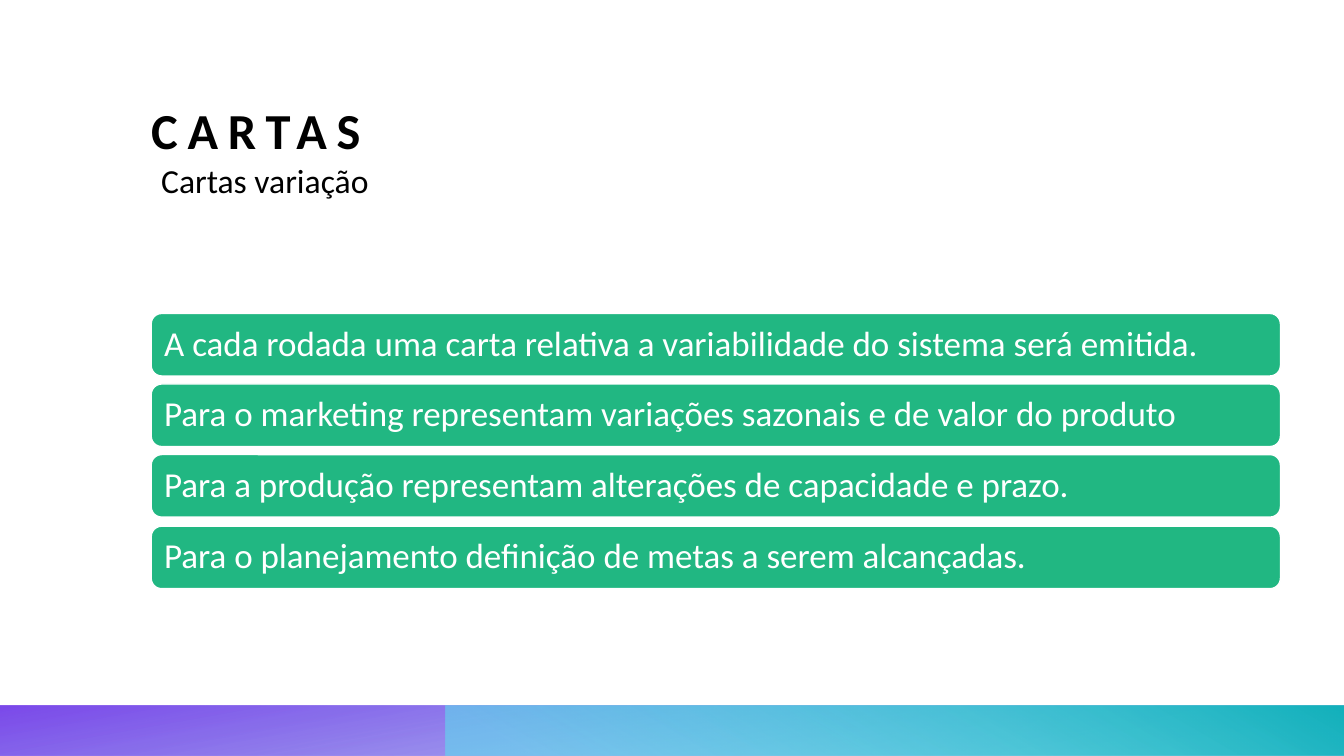
from lxml import etree
from pptx import Presentation
from pptx.dml.color import RGBColor
from pptx.enum.shapes import MSO_SHAPE
from pptx.enum.text import MSO_ANCHOR, MSO_AUTO_SIZE, PP_ALIGN
from pptx.oxml.ns import qn
from pptx.util import Pt

RECT, ROUND_RECT = MSO_SHAPE.RECTANGLE, MSO_SHAPE.ROUNDED_RECTANGLE
TOP, MIDDLE, BOTTOM = MSO_ANCHOR.TOP, MSO_ANCHOR.MIDDLE, MSO_ANCHOR.BOTTOM
LEFT, GROW = PP_ALIGN.LEFT, MSO_AUTO_SIZE.SHAPE_TO_FIT_TEXT

PX = 9144
FONT = "Calibri"
COLORS = {
    "text": "000000", "white": "FFFFFF", "card": "21B782",
    "indigo": "2E40D9", "purple": "6529E7", "cyan": "5BE4EE", "teal": "14B1BC",
}
SLIDE_W, SLIDE_H = 1333, 750
MARGIN, CONTENT_W = 150, 1120
FIRST_TOP, LAST_TOP, CARD_H = 311, 522, 62
BAND_TOP, BAND_H, TEAL_LEFT = 700, 50, 442
CARDS = [
    "A cada rodada uma carta relativa a variabilidade do sistema será emitida.",
    "Para o marketing representam variações sazonais e de valor do produto",
    "Para a produção representam alterações de capacidade e prazo.",
    "Para o planejamento definição de metas a serem alcançadas.",
]


def color(name):
    """Return the RGB value of a named colour."""
    return RGBColor.from_string(COLORS[name])


def box(*lengths):
    """Convert pixel lengths to EMU."""
    return [n * PX for n in lengths]


def write(sp, text, size, ink, anchor, insets):
    """Fill a shape with one left-aligned paragraph and return it."""
    tf = sp.text_frame
    tf.word_wrap = True
    tf.vertical_anchor = anchor
    tf.margin_left, tf.margin_top, tf.margin_right, tf.margin_bottom = box(*insets)
    p = tf.paragraphs[0]
    p.text = text
    p.alignment = LEFT
    p.font.name, p.font.size = FONT, Pt(size)
    p.font.color.rgb = color(ink)
    return p


def add_band(s, left, stops, angle, rotation=0):
    """Add a mirrored gradient band reaching the right slide edge."""
    sp = s.shapes.add_shape(RECT, *box(left, BAND_TOP, SLIDE_W - left, BAND_H))
    sp.shadow.inherit = False
    sp.line.fill.background()
    sp.rotation = rotation
    xfrm = sp._element.spPr.find(qn("a:xfrm"))
    xfrm.set("flipH", "1")
    grad = etree.Element(qn("a:gradFill"), rotWithShape="1")
    gs_lst = etree.SubElement(grad, qn("a:gsLst"))
    for pos, name, alpha in stops:
        gs = etree.SubElement(gs_lst, qn("a:gs"), pos=str(pos * 1000))
        clr = etree.SubElement(gs, qn("a:srgbClr"), val=COLORS[name])
        etree.SubElement(clr, qn("a:alpha"), val=str(alpha * 1000))
    etree.SubElement(grad, qn("a:lin"), ang=str(angle * 60000), scaled="0")
    sp._element.spPr.find(qn("a:prstGeom")).addnext(grad)


def add_title(s, text):
    """Add the bold, letter-spaced title."""
    sp = s.shapes.add_textbox(*box(MARGIN, 87, CONTENT_W, 71))
    p = write(sp, text, 36, "text", BOTTOM, (0, 0, 0, 0))
    p.font.bold = True
    p.runs[0].font._element.set("spc", "700")


def add_subtitle(s, text):
    """Add the line under the title."""
    sp = s.shapes.add_textbox(*box(MARGIN, 154, CONTENT_W, 50))
    write(sp, text, 24, "text", TOP, (10, 5, 10, 5))
    sp.text_frame.auto_size = GROW


def add_card(s, top, text):
    """Add one rounded green bar with its text."""
    sp = s.shapes.add_shape(ROUND_RECT, *box(MARGIN, top, CONTENT_W, CARD_H))
    sp.shadow.inherit = False
    sp.fill.solid()
    sp.fill.fore_color.rgb = color("card")
    sp.line.color.rgb = color("white")
    sp.line.width = Pt(1)
    p = write(sp, text, 25, "white", MIDDLE, (10, 10, 10, 10))
    p.line_spacing = 0.9


def main():
    """Build the slide and save it."""
    prs = Presentation()
    prs.slide_width, prs.slide_height = box(SLIDE_W, SLIDE_H)
    s = prs.slides.add_slide(prs.slide_layouts[6])
    add_band(s, 0, [(14, "indigo", 28), (100, "purple", 85)], 100, 180)
    add_band(s, TEAL_LEFT, [(9, "cyan", 55), (99, "teal", 100)], 240)
    add_title(s, "CARTAS")
    add_subtitle(s, "Cartas variação")
    for i, text in enumerate(CARDS):
        top = FIRST_TOP + i * (LAST_TOP - FIRST_TOP) // (len(CARDS) - 1)
        add_card(s, top, text)
    prs.save("out.pptx")


if __name__ == "__main__":
    main()
